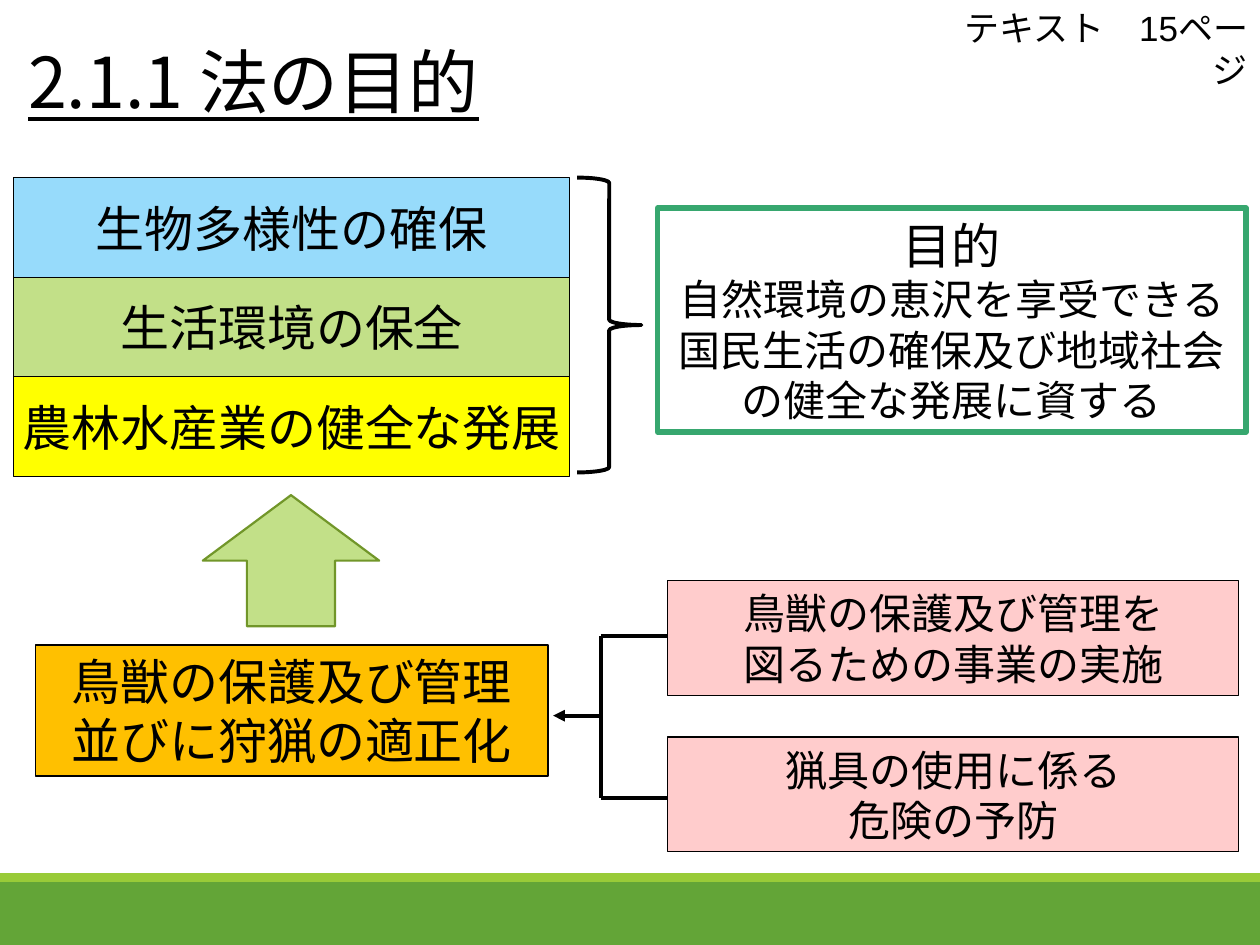
import pptx
import pptx.util
import pptx.dml.color
import pptx.enum.shapes
import pptx.enum.text
import pptx.oxml.ns
import lxml.etree

Inches, Pt = pptx.util.Inches, pptx.util.Pt
SHAPE = pptx.enum.shapes.MSO_SHAPE
ALIGN = pptx.enum.text.PP_ALIGN
ANCHOR = pptx.enum.text.MSO_ANCHOR
qn = pptx.oxml.ns.qn

CJK = "Noto Sans CJK JP"
COLORS = {
    "black": "000000", "white": "FFFFFF", "band": "63A537", "stripe": "99CB38",
    "pink": "FFCCCC", "frame": "37A76F", "orange": "FFC000", "blue": "97DBFB",
    "green": "C2E088", "yellow": "FFFF00", "arrow": "719629",
}
TITLE = "2.1.1 法の目的"
PAGE_REF = "テキスト\u300015ページ".replace("\u3000", "　")
GOALS = [("生物多様性の確保", "blue"), ("生活環境の保全", "green"),
         ("農林水産業の健全な発展", "yellow")]
PURPOSE = [("目的", 28),
           ("自然環境の恵沢を享受できる国民生活の確保及び地域社会の健全な発展に資する", 24)]
CORE = [("鳥獣の保護及び管理", 28), ("並びに狩猟の適正化", 28)]
MEANS = [(4.61, ["鳥獣の保護及び管理を", "図るための事業の実施"]),
         (5.85, ["猟具の使用に係る", "危険の予防"])]

GOAL_LEFT, GOAL_TOP, GOAL_W, GOAL_H = 0.11, 1.41, 4.41, 0.79
MEANS_LEFT, MEANS_W, MEANS_H = 5.3, 4.53, 0.91
TRUNK_X, TRUNK_TOP, TRUNK_BOTTOM = 4.77, 5.05, 6.33
ARROW_TIP_X, ARROW_Y = 4.39, 5.68


def rgb(name):
    return pptx.dml.color.RGBColor.from_string(COLORS[name])


def add_run(p, text, size, font=CJK, underline=None):
    r = p.add_run()
    r.text = text
    r.font.size = Pt(size)
    r.font.name = font
    r.font.underline = underline
    r.font.color.rgb = rgb("black")
    ea = lxml.etree.Element(qn("a:ea"), typeface=CJK)
    r._r.rPr.find(qn("a:latin")).addnext(ea)


def add_shape(slide, kind, box, fill=None, line=None, width=0.75, lines=(), wrap=True):
    sp = slide.shapes.add_shape(kind, *map(Inches, box))
    sp.shadow.inherit = False
    if fill:
        sp.fill.solid()
        sp.fill.fore_color.rgb = rgb(fill)
    else:
        sp.fill.background()
    if line:
        sp.line.color.rgb = rgb(line)
        sp.line.width = Pt(width)
    else:
        sp.line.fill.background()
    tf = sp.text_frame
    tf.word_wrap = wrap
    tf.vertical_anchor = ANCHOR.MIDDLE
    for i, (text, size) in enumerate(lines):
        p = tf.add_paragraph() if i else tf.paragraphs[0]
        p.alignment = ALIGN.CENTER
        add_run(p, text, size)


def add_textbox(slide, box):
    tf = slide.shapes.add_textbox(*map(Inches, box)).text_frame
    tf.word_wrap = True
    return tf.paragraphs[0]


def add_line(slide, x1, y1, x2, y2, arrow=False):
    c = slide.shapes.add_connector(pptx.enum.shapes.MSO_CONNECTOR.STRAIGHT,
                                   *map(Inches, (x1, y1, x2, y2)))
    c.line.color.rgb = rgb("black")
    c.line.width = Pt(2.25)
    if arrow:
        lxml.etree.SubElement(c.line._get_or_add_ln(), qn("a:tailEnd"), type="triangle")
    lxml.etree.SubElement(c._element.spPr, qn("a:effectLst"))


def main():
    prs = pptx.Presentation()
    prs.slide_width, prs.slide_height = Inches(10), Inches(7.5)
    slide = prs.slides.add_slide(prs.slide_layouts[6])

    add_shape(slide, SHAPE.RECTANGLE, (0, 7, 10, 0.5), "band")
    add_shape(slide, SHAPE.RECTANGLE, (0, 6.93, 10, 0.07), "stripe")

    p = add_textbox(slide, (0, 0.33, 9.15, 0.81))
    p.line_spacing, p.space_before, p.space_after = 0.9, Pt(12), Pt(2)
    add_run(p, " ", 40)
    add_run(p, TITLE, 40, underline=True)
    p = add_textbox(slide, (7.46, 0, 2.54, 0.44))
    p.alignment = ALIGN.RIGHT
    add_run(p, PAGE_REF, 20, "Arial")

    add_shape(slide, SHAPE.RECTANGLE, (5.22, 1.65, 4.67, 1.78), "white", "frame", 3, PURPOSE)
    add_shape(slide, SHAPE.RECTANGLE, (0.28, 5.12, 4.07, 1.04), "orange", "black", lines=CORE)
    for i, (text, fill) in enumerate(GOALS):
        box = (GOAL_LEFT, GOAL_TOP + i * GOAL_H, GOAL_W, GOAL_H)
        add_shape(slide, SHAPE.RECTANGLE, box, fill, "black", lines=[(text, 28)], wrap=False)
    for top, texts in MEANS:
        add_shape(slide, SHAPE.RECTANGLE, (MEANS_LEFT, top, MEANS_W, MEANS_H), "pink", "black",
                  lines=[(text, 24) for text in texts], wrap=False)

    add_shape(slide, SHAPE.RIGHT_BRACE, (4.58, GOAL_TOP, 0.51, 2.34), None, "black", 2.25)
    for y in (TRUNK_TOP, TRUNK_BOTTOM):
        add_line(slide, TRUNK_X, y, MEANS_LEFT, y)
    add_line(slide, TRUNK_X, TRUNK_TOP, TRUNK_X, TRUNK_BOTTOM)
    add_line(slide, TRUNK_X, ARROW_Y, ARROW_TIP_X, ARROW_Y, arrow=True)
    add_shape(slide, SHAPE.UP_ARROW, (1.61, 3.93, 1.4, 1.04), "green", "arrow", 1.25)

    prs.save("out.pptx")


if __name__ == "__main__":
    main()
